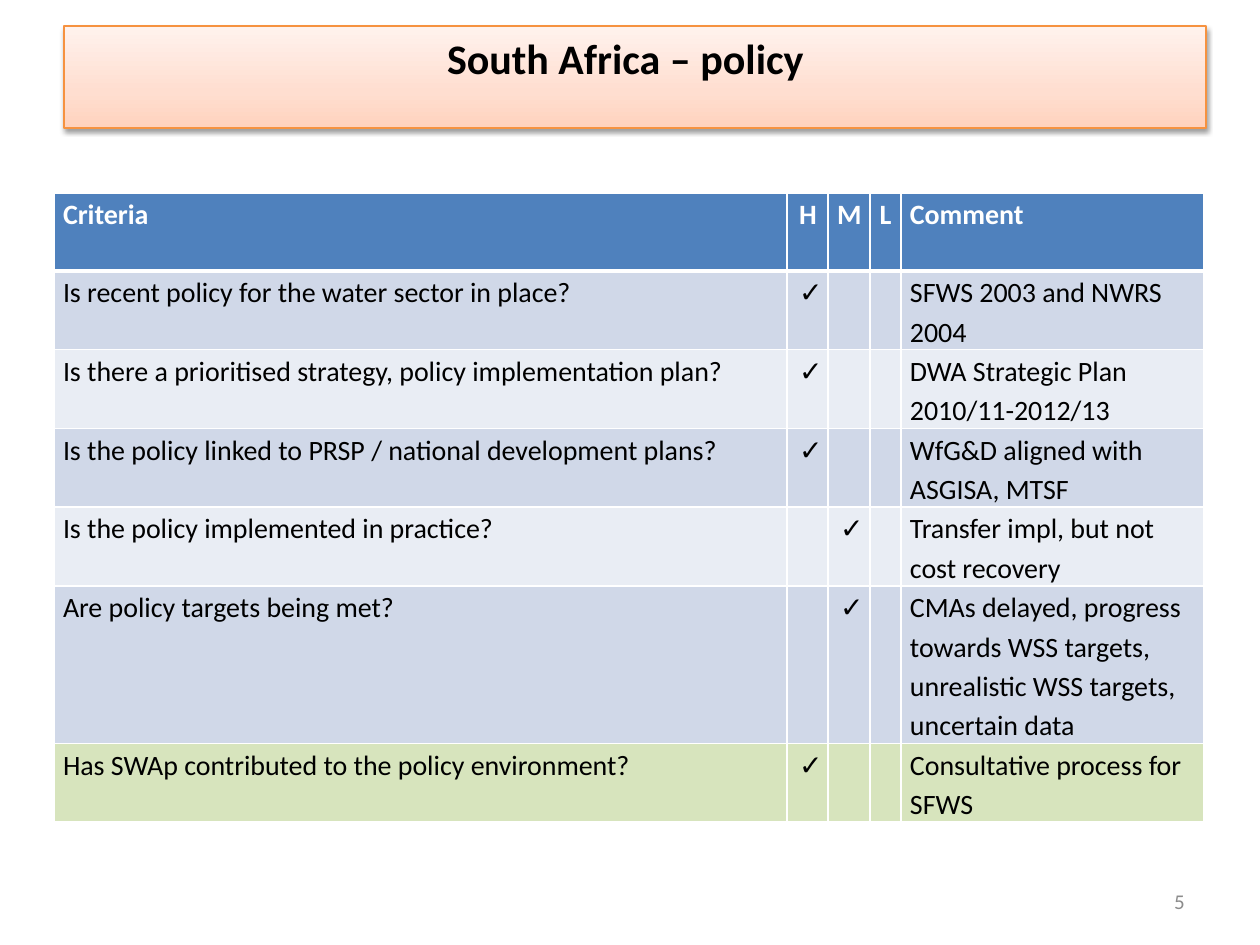
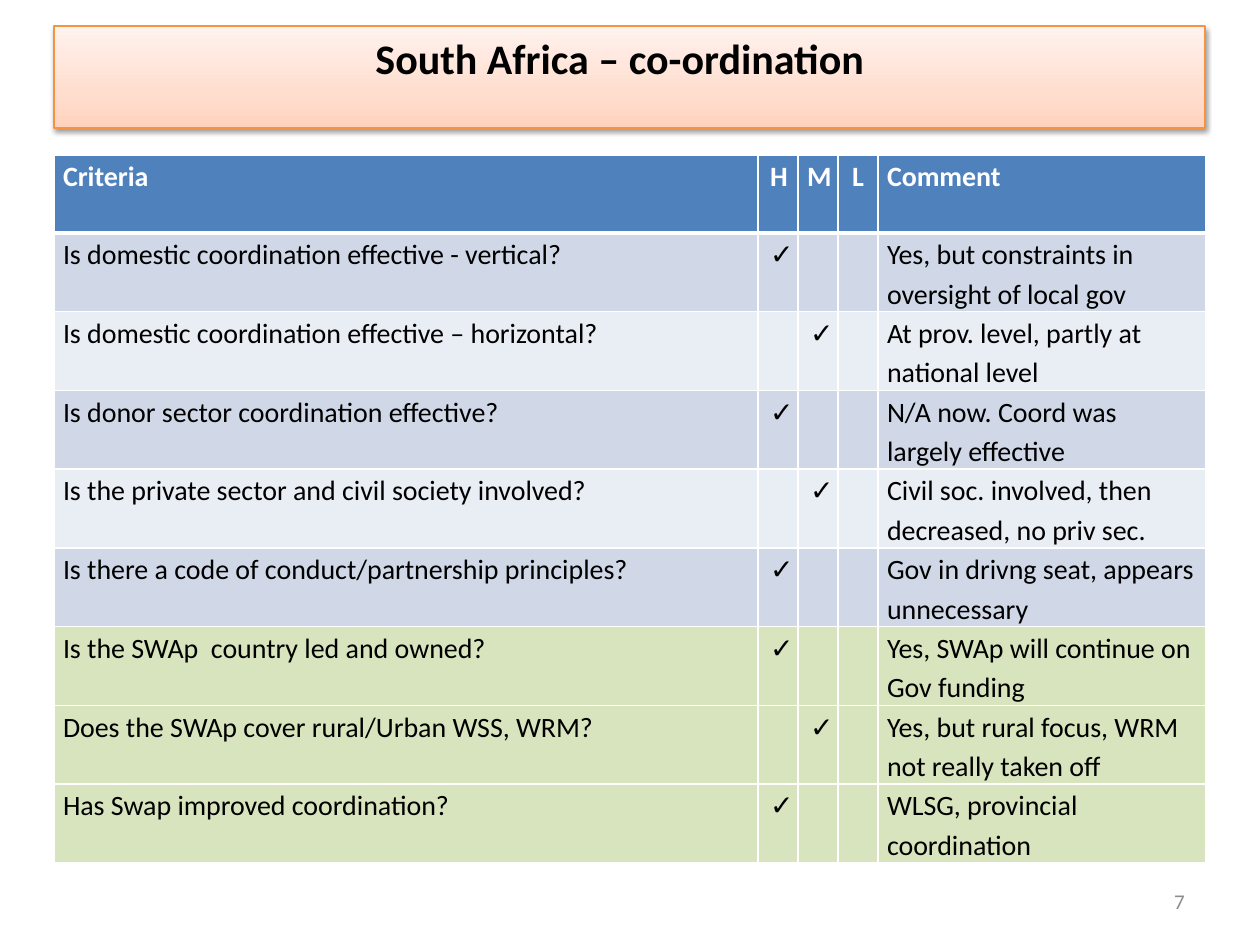
from dataclasses import dataclass

from lxml import etree
from pptx import Presentation
from pptx import util as u
from pptx.dml.color import RGBColor
from pptx.enum import text
from pptx.oxml.ns import nsdecls

PX = 7258  # EMU per px, at 126 px to the inch
TICK = "✓"
HEADER = ("Criteria", "H", "M", "L", "Comment")

# Each criterion: question, rating, comment, whether it concerns the SWAp
SLIDES = [
    dict(
        title="South Africa – policy", number="5",
        band=(64, 26, 1142, 102), table=(54, 193), cols=(733, 41, 42, 31, 303),
        criteria=[
            ("Is recent policy for the water sector in place?", "H",
             "SFWS 2003 and NWRS 2004", False),
            ("Is there a prioritised strategy, policy implementation plan?", "H",
             "DWA Strategic Plan 2010/11-2012/13", False),
            ("Is the policy linked to PRSP / national development plans?", "H",
             "WfG&D aligned with ASGISA, MTSF", False),
            ("Is the policy implemented in practice?", "M",
             "Transfer impl, but not cost recovery", False),
            ("Are policy targets being met?", "M",
             "CMAs delayed, progress towards WSS targets, "
             "unrealistic WSS targets, uncertain data", False),
            ("Has SWAp contributed to the policy environment?", "H",
             "Consultative process for SFWS", True),
        ],
    ),
    dict(
        title="South Africa – co-ordination", number="7",
        band=(54, 26, 1151, 102), table=(54, 155), cols=(704, 40, 40, 40, 328),
        criteria=[
            ("Is domestic coordination effective - vertical?", "H",
             "Yes, but constraints in oversight of local gov", False),
            ("Is domestic coordination effective – horizontal?", "M",
             "At prov. level, partly at national level", False),
            ("Is donor sector coordination effective?", "H",
             "N/A now. Coord was largely effective", False),
            ("Is the private sector and civil society involved?", "M",
             "Civil soc. involved, then decreased, no priv sec.", False),
            ("Is there a code of conduct/partnership principles?", "H",
             "Gov in drivng seat, appears unnecessary", False),
            ("Is the SWAp  country led and owned?", "H",
             "Yes, SWAp will continue on Gov funding", True),
            ("Does the SWAp cover rural/Urban WSS, WRM?", "M",
             "Yes, but rural focus, WRM not really taken off", True),
            ("Has Swap improved coordination?", "H",
             "WLSG, provincial coordination", True),
        ],
    ),
]


@dataclass(frozen=True)
class Theme:
    font: str = "Calibri"
    title_size: int = 24
    table_size: int = 16
    number_size: int = 12
    ink: str = "000000"
    white: str = "FFFFFF"
    grey: str = "8C8C8C"
    header: str = "4F81BD"
    bands: tuple = ("D0D8E8", "E9EDF4")
    swap: str = "D7E4BD"
    title_line: str = "F69240"
    title_stops: tuple = ((0, "FFD2BD"), (35, "FFDED0"), (100, "FFF2ED"))


T = Theme()
ROW_HEIGHT = 78
CELL_INSET = 9
HANGING = 48
TICK_INDENT = 3
NUMBER_BOX = (903, 876, 294, 50)
TITLE_RIGHT_INSET = 32


def px(n):
    return u.Emu(n * PX)


def add_xml(parent, xml):
    """Append an element given as text with an {ns} slot for the namespace."""
    parent.append(etree.fromstring(xml.replace("{ns}", nsdecls("a"))))


def add_run(p, words, size, color, bold=False):
    r = p.add_run()
    r.text = words
    r.font.name, r.font.size, r.font.bold = T.font, u.Pt(size), bold
    r.font.color.rgb = RGBColor.from_string(color)


def place(sp, box):
    sp.left, sp.top, sp.width, sp.height = map(px, box)


def add_title(s, words, box):
    sp = s.shapes.title
    place(sp, box)
    stops = "".join(f'<a:gs pos="{pos * 1000}"><a:srgbClr val="{color}"/></a:gs>'
                    for pos, color in T.title_stops)
    add_xml(sp._element.spPr, f'<a:gradFill {{ns}} rotWithShape="1"><a:gsLst>{stops}</a:gsLst>'
                              '<a:lin ang="16200000" scaled="0"/></a:gradFill>')
    sp.line.color.rgb = RGBColor.from_string(T.title_line)
    sp.line.width = u.Pt(0.75)
    add_xml(sp._element.spPr,
            '<a:effectLst {ns}><a:outerShdw blurRad="40000" dist="20000" dir="5400000" '
            f'rotWithShape="0"><a:srgbClr val="{T.ink}"><a:alpha val="38000"/></a:srgbClr>'
            '</a:outerShdw></a:effectLst>')
    tf = sp.text_frame
    tf.auto_size = text.MSO_AUTO_SIZE.NONE
    tf.vertical_anchor = text.MSO_ANCHOR.TOP
    tf.margin_right = px(TITLE_RIGHT_INSET)
    p = tf.paragraphs[0]
    p.alignment = text.PP_ALIGN.CENTER
    add_run(p, words, T.title_size, T.ink, bold=True)


def add_borders(cell, top, bottom):
    tc_pr = cell._tc.get_or_add_tcPr()
    for side, width in (("L", 1), ("R", 1), ("T", top), ("B", bottom)):
        add_xml(tc_pr, f'<a:ln{side} {{ns}} w="{u.Pt(width)}"><a:solidFill>'
                       f'<a:srgbClr val="{T.white}"/></a:solidFill></a:ln{side}>')


def fill_cell(cell, words, row, col, fill):
    is_header = row == 0
    add_borders(cell, top=3 if row == 1 else 1, bottom=3 if is_header else 1)
    cell.fill.solid()
    cell.fill.fore_color.rgb = RGBColor.from_string(fill)
    cell.margin_left = cell.margin_right = px(CELL_INSET)
    cell.margin_top = cell.margin_bottom = 0
    if not words:
        return
    p = cell.text_frame.paragraphs[0]
    p.line_spacing = 1.15
    p_pr = p._p.get_or_add_pPr()
    if col == 0:
        p_pr.set("marL", str(px(HANGING)))
        p_pr.set("indent", str(px(-HANGING)))
    elif words in (TICK, "H"):
        p_pr.set("marL", str(px(TICK_INDENT)))
    elif words in ("M", "L"):
        p.alignment = text.PP_ALIGN.CENTER
    add_run(p, words, T.table_size, T.white if is_header else T.ink, bold=is_header)


def add_criteria(s, criteria, origin, widths):
    rows = [(HEADER, T.header)]
    for i, (question, rating, comment, is_swap) in enumerate(criteria):
        ticks = [TICK if rating == level else "" for level in HEADER[1:4]]
        rows.append(((question, *ticks, comment), T.swap if is_swap else T.bands[i % 2]))
    box = (*origin, sum(widths), ROW_HEIGHT * len(rows))
    table = s.shapes.add_table(len(rows), len(widths), *map(px, box)).table
    for column, width in zip(table.columns, widths):
        column.width = px(width)
    for i, (cells, fill) in enumerate(rows):
        table.rows[i].height = px(ROW_HEIGHT)
        for j, words in enumerate(cells):
            fill_cell(table.cell(i, j), words, i, j, fill)


def add_number(s, number):
    tf = s.shapes.add_textbox(*map(px, NUMBER_BOX)).text_frame
    tf.word_wrap = True
    tf.vertical_anchor = text.MSO_ANCHOR.MIDDLE
    p = tf.paragraphs[0]
    p.alignment = text.PP_ALIGN.RIGHT
    add_run(p, number, T.number_size, T.grey)


def main():
    prs = Presentation()
    prs.slide_width, prs.slide_height = u.Inches(10), u.Inches(7.5)
    title_only = prs.slide_layouts[5]
    for content in SLIDES:
        s = prs.slides.add_slide(title_only)
        add_title(s, content["title"], content["band"])
        add_criteria(s, content["criteria"], content["table"], content["cols"])
        add_number(s, content["number"])
    prs.save("out.pptx")


if __name__ == "__main__":
    main()
